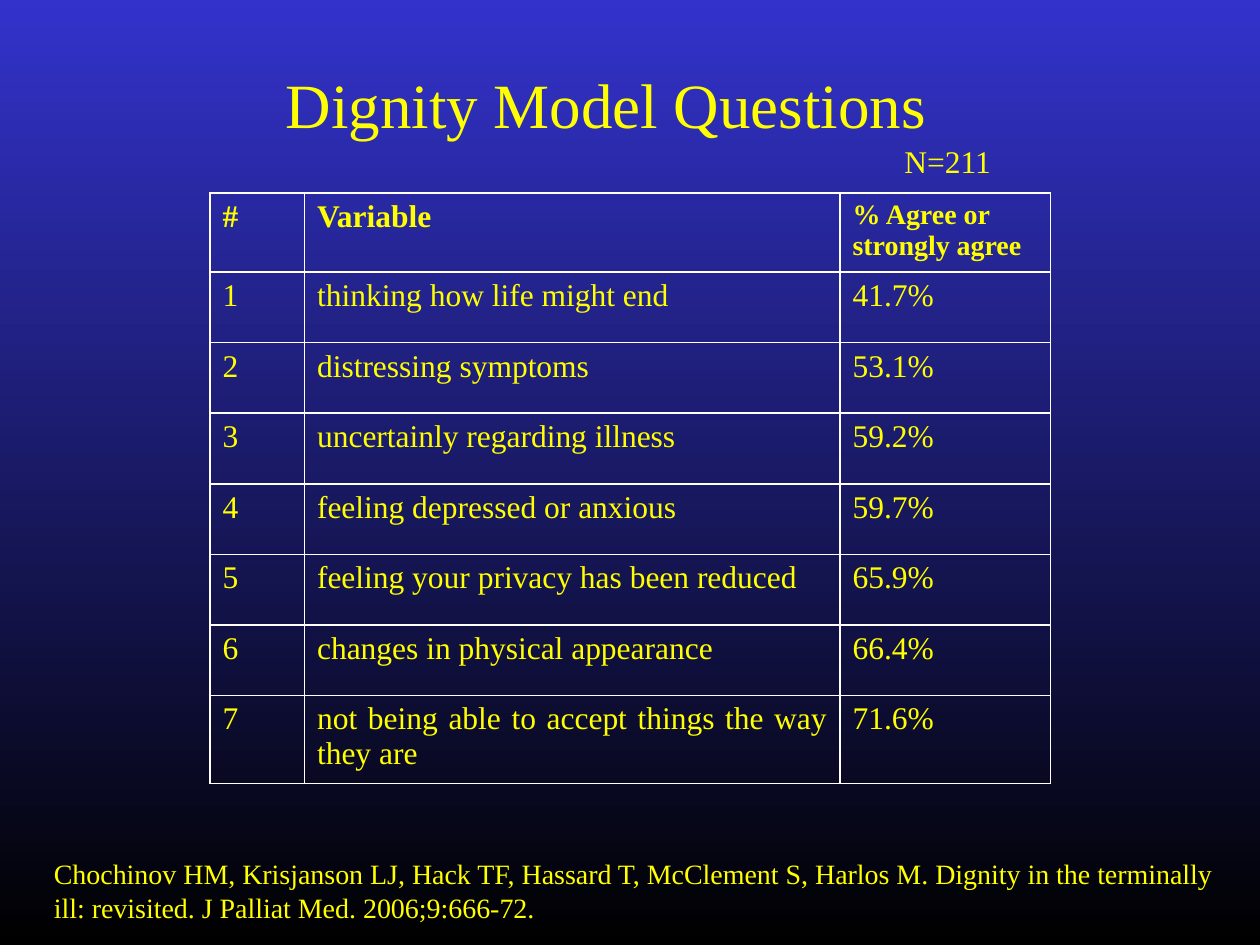
from lxml.etree import SubElement
from pptx import Presentation
from pptx.dml.color import RGBColor
from pptx.enum.text import PP_ALIGN
from pptx.oxml.ns import qn
from pptx.util import Inches, Pt

COLORS = {"top": "3333CC", "bottom": "000000", "text": "FFFF00", "border": "FFFFFF"}
FONT = "Times New Roman"

deck = Presentation()
deck.slide_width, deck.slide_height = Inches(10), Inches(7.5)
WIDTH, HEIGHT = deck.slide_width, deck.slide_height
page = deck.slides.add_slide(deck.slide_layouts[6])


def write(frame, text, size=18, bold=False, align=PP_ALIGN.LEFT, before=50):
    """Write one paragraph; before is the space above in percent of a line."""
    frame.word_wrap = True
    para = frame.paragraphs[0]
    para.alignment = align
    spacing = SubElement(para._p.get_or_add_pPr(), qn("a:spcBef"))
    SubElement(spacing, qn("a:spcPct"), val=str(before * 1000))
    span = para.add_run()
    span.text = text
    span.font.name, span.font.size, span.font.bold = FONT, Pt(size), bold
    span.font.color.rgb = RGBColor.from_string(COLORS["text"])


def draw_borders(cell):
    properties = cell._tc.get_or_add_tcPr()
    for side in ("lnL", "lnR", "lnT", "lnB"):
        line = SubElement(properties, qn(f"a:{side}"), w=str(Pt(1)))
        fill = SubElement(line, qn("a:solidFill"))
        SubElement(fill, qn("a:srgbClr"), val=COLORS["border"])


# Background gradient, running downwards
background = page.background.fill
background.gradient()
background.gradient_angle = 270
for stop, name in zip(background.gradient_stops, ("top", "bottom")):
    stop.color.rgb = RGBColor.from_string(COLORS[name])

# Table of questions
rows = [
    ("#", "Variable", "% Agree or strongly agree"),
    ("1", "thinking how life might end", "41.7%"),
    ("2", "distressing symptoms", "53.1%"),
    ("3", "uncertainly regarding illness", "59.2%"),
    ("4", "feeling depressed or anxious", "59.7%"),
    ("5", "feeling your privacy has been reduced", "65.9%"),
    ("6", "changes in physical appearance", "66.4%"),
    ("7", "not being able to accept things the way they are", "71.6%"),
]
column_widths = [0.75, 4.25, 1.67]
row_heights = [0.63] + [0.56] * 6 + [0.7]
table = page.shapes.add_table(
    len(rows), len(column_widths), WIDTH // 6, Inches(1.53),
    Inches(sum(column_widths)), Inches(sum(row_heights))).table
table.first_row = table.horz_banding = False
for column, width in zip(table.columns, column_widths):
    column.width = Inches(width)
for row, height in zip(table.rows, row_heights):
    row.height = Inches(height)
for r, texts in enumerate(rows):
    for c, text in enumerate(texts):
        cell = table.cell(r, c)
        draw_borders(cell)
        cell.fill.background()
        share_heading = r == 0 and c == 2
        write(cell.text_frame, text, size=16 if share_heading else 18, bold=r == 0,
              align=PP_ALIGN.LEFT if share_heading else PP_ALIGN.JUSTIFY, before=20)

# Title, sample size and citation: left, top, width, height as shares of the slide
texts = [
    ("Dignity Model Questions", 36, (0.217, 0.063, 0.667, 0.093)),
    ("N=211", 18, (0.708, 0.144, 0.15, 0.053)),
    ("Chochinov HM, Krisjanson LJ, Hack TF, Hassard T, McClement S, Harlos M. "
     "Dignity in the terminally ill: revisited. J Palliat Med. 2006;9:666-72.",
     16, (0.033, 0.9, 0.967, 0.12)),
]
for text, size, (left, top, width, height) in texts:
    box = page.shapes.add_textbox(int(left * WIDTH), int(top * HEIGHT),
                                  int(width * WIDTH), int(height * HEIGHT))
    write(box.text_frame, text, size=size)

deck.save("out.pptx")
